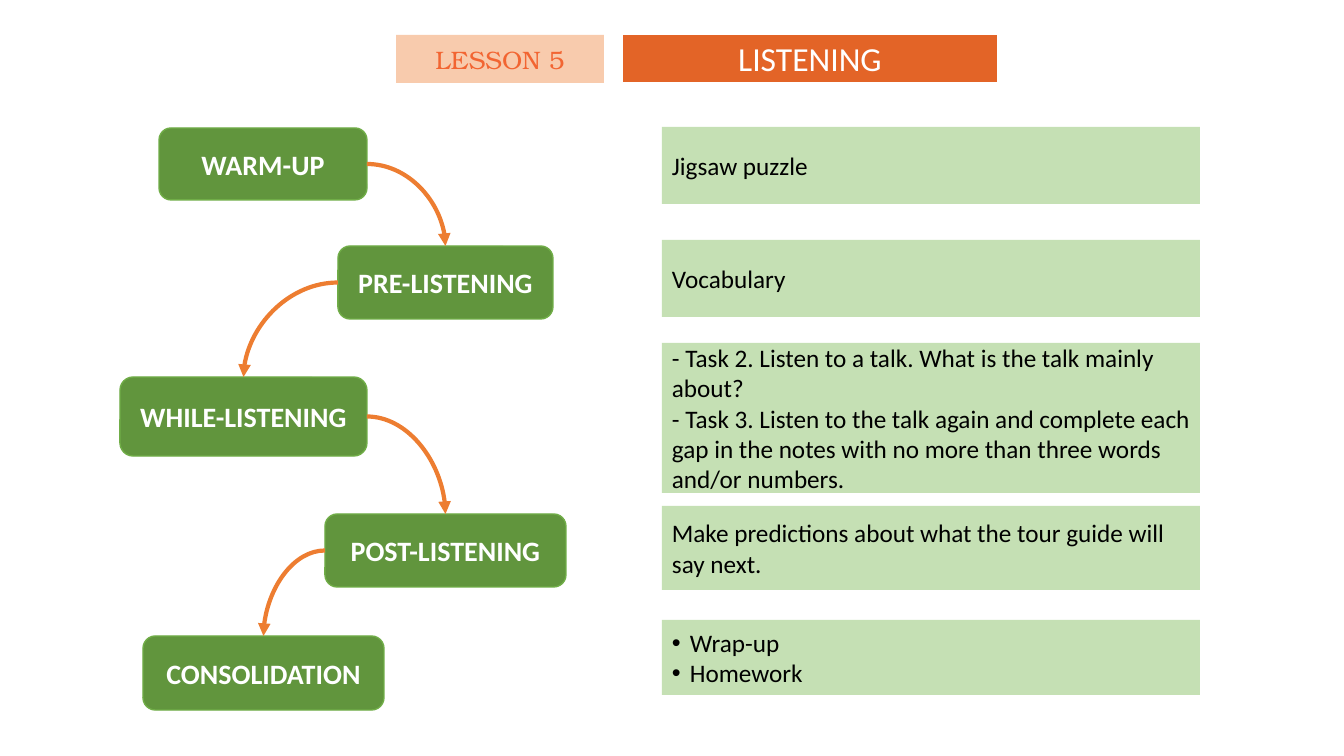
"""Build the Lesson 5 listening overview slide: five stages and their activities."""
from lxml import etree
from pptx import Presentation
from pptx.dml.color import RGBColor
from pptx.enum.shapes import MSO_CONNECTOR, MSO_SHAPE
from pptx.enum.text import MSO_ANCHOR, PP_ALIGN
from pptx.oxml.ns import qn
from pptx.util import Pt

RECT, ROUND = MSO_SHAPE.RECTANGLE, MSO_SHAPE.ROUNDED_RECTANGLE
CURVE = MSO_CONNECTOR.CURVE
MIDDLE = MSO_ANCHOR.MIDDLE
LEFT, CENTER = PP_ALIGN.LEFT, PP_ALIGN.CENTER
TOP_SITE, LEFT_SITE, RIGHT_SITE = 0, 1, 3
EMU_PER_PX = 12192000 / 1344
COLORS = {
    "stage": "61953D", "stage_line": "70AD47", "panel": "C5E0B4",
    "arrow": "ED7D31", "header": "E36427", "lesson": "F8CBAD",
    "lesson_text": "F26532", "white": "FFFFFF", "black": "000000",
}


def px(n):
    return round(n * EMU_PER_PX)


def add_box(kind, box, fill, lines, size, color, align=CENTER,
            font="Calibri", bold=False, line=None, line_width=1):
    s = slide.shapes.add_shape(kind, *[px(n) for n in box])
    s.shadow.inherit = False
    s.fill.solid()
    s.fill.fore_color.rgb = RGBColor.from_string(COLORS[fill])
    if line:
        s.line.color.rgb = RGBColor.from_string(COLORS[line])
        s.line.width = Pt(line_width)
    else:
        s.line.fill.background()
    tf = s.text_frame
    tf.word_wrap = True
    tf.vertical_anchor = MIDDLE
    for i, text in enumerate(lines):
        p = tf.add_paragraph() if i else tf.paragraphs[0]
        p.alignment = align
        r = p.add_run()
        r.text = text
        r.font.name = font
        r.font.size = Pt(size)
        r.font.bold = bold
        r.font.color.rgb = RGBColor.from_string(COLORS[color])
    return s


prs = Presentation()
prs.slide_width, prs.slide_height = px(1344), px(756)
slide = prs.slides.add_slide(prs.slide_layouts[6])

add_box(RECT, (396, 35, 208, 48), "lesson", ["LESSON 5"], 18, "lesson_text",
        font="TeX Gyre Bonum")
add_box(RECT, (622, 34, 376, 49), "header", ["LISTENING"], 24, "white",
        line="white", line_width=1.5)

stages = [
    ("WARM-UP", (159, 128, 208, 72)),
    ("PRE-LISTENING", (338, 246, 215, 73)),
    ("WHILE-LISTENING", (120, 377, 247, 79)),
    ("POST-LISTENING", (325, 514, 241, 73)),
    ("CONSOLIDATION", (143, 636, 241, 74)),
]
stage_boxes = [add_box(ROUND, box, "stage", [name], 20, "white", bold=True,
                       line="stage_line") for name, box in stages]

activities = [
    (127, 77, ["Jigsaw puzzle"]),
    (240, 77, ["Vocabulary"]),
    (343, 150, ["- Task 2. Listen to a talk. What is the talk mainly about?",
                "- Task 3. Listen to the talk again and complete each gap in the "
                "notes with no more than three words and/or numbers."]),
    (506, 84, ["Make predictions about what the tour guide will say next."]),
    (620, 75, ["Wrap-up", "Homework"]),
]
for top, height, lines in activities:
    panel = add_box(RECT, (662, top, 538, height), "panel", lines, 18, "black", LEFT)

for p in panel.text_frame.paragraphs:
    pPr = p._p.get_or_add_pPr()
    pPr.set("marL", str(px(18)))
    pPr.set("indent", str(-px(18)))
    etree.SubElement(pPr, qn("a:buFont")).set("typeface", "Arial")
    etree.SubElement(pPr, qn("a:buChar")).set("char", "•")

for i, (start, end) in enumerate(zip(stage_boxes, stage_boxes[1:])):
    arrow = slide.shapes.add_connector(CURVE, 0, 0, 0, 0)
    arrow.begin_connect(start, LEFT_SITE if i % 2 else RIGHT_SITE)
    arrow.end_connect(end, TOP_SITE)
    arrow.line.color.rgb = RGBColor.from_string(COLORS["arrow"])
    arrow.line.width = Pt(3)
    spPr = arrow._element.spPr
    spPr.find(qn("a:prstGeom")).set("prst", "curvedConnector2")
    etree.SubElement(spPr.find(qn("a:ln")), qn("a:tailEnd")).set("type", "triangle")
    etree.SubElement(spPr, qn("a:effectLst"))

prs.save("out.pptx")
